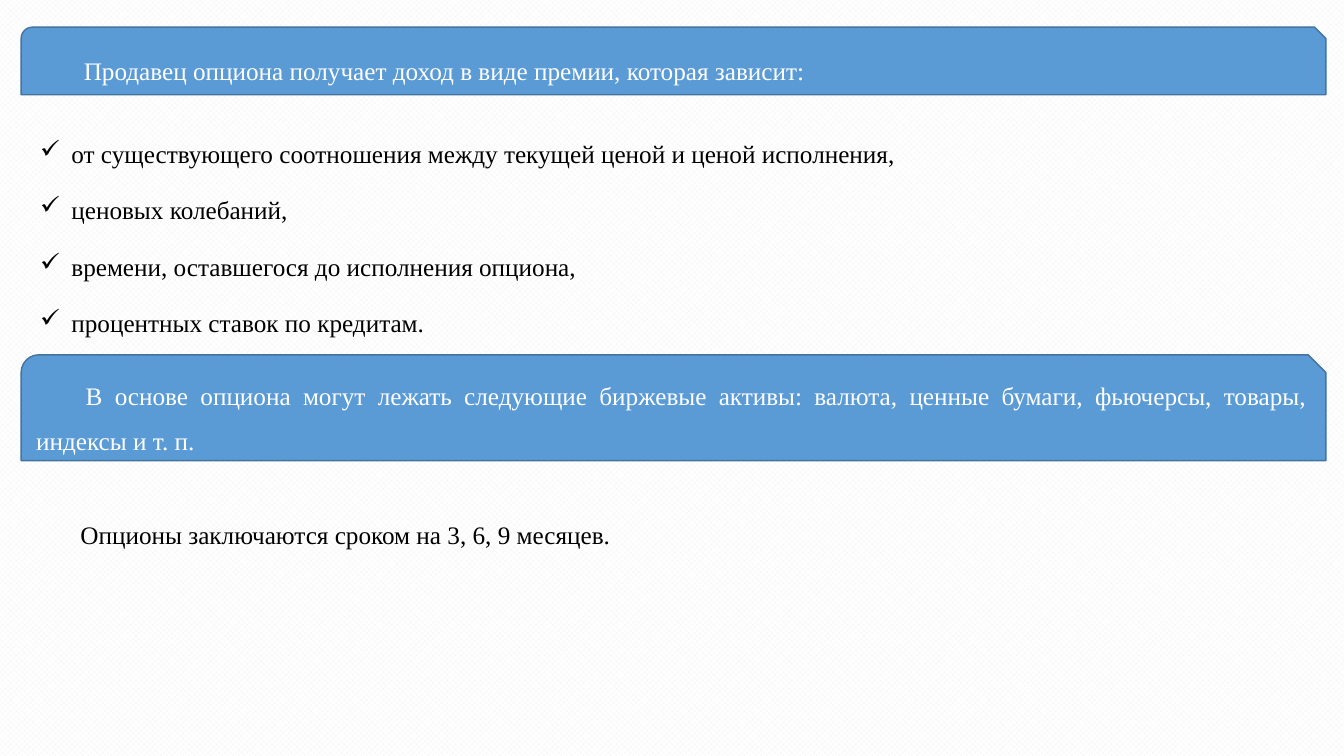
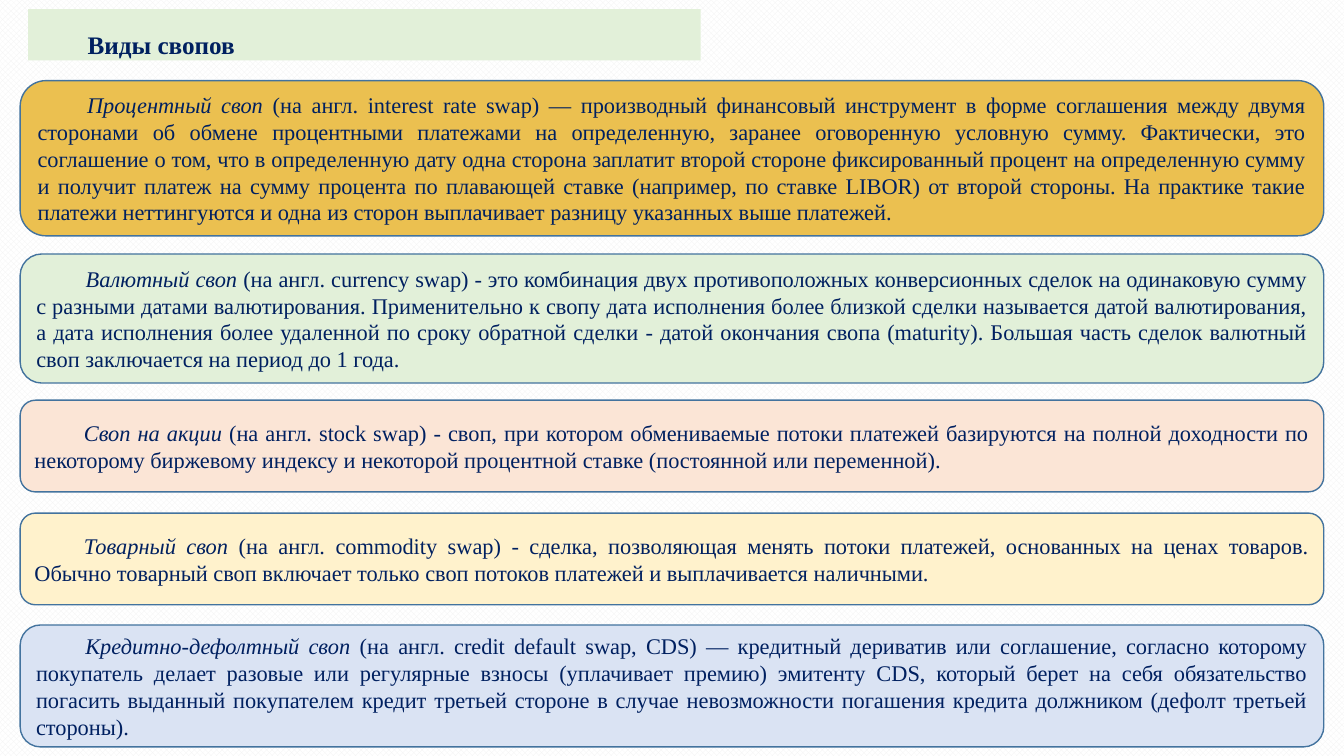
"""Build two slides on options and kinds of swaps."""
import dataclasses

import lxml.etree
import pptx
import pptx.dml.color
import pptx.enum.dml
import pptx.enum.shapes
import pptx.enum.text
import pptx.oxml.ns
import pptx.util

Inches = pptx.util.Inches
Pt = pptx.util.Pt
SHAPES = pptx.enum.shapes.MSO_SHAPE


@dataclasses.dataclass(frozen=True)
class Theme:
    """Colours, type sizes and spacing of the deck."""
    font: str = "Times New Roman"
    lead_size: int = 18
    body_size: int = 16
    paper: str = "FFFFFF"
    weave: str = "F2F2F2"
    black: str = "000000"
    white: str = "FFFFFF"
    navy: str = "002060"
    blue: str = "5B9BD5"
    outline: str = "43739E"
    gold: str = "EBC050"
    green: str = "E2F0D9"
    peach: str = "FBE5D6"
    cream: str = "FFF2CC"
    lavender: str = "DAE3F3"
    first_line: float = 0.49
    bullet_indent: float = 0.31
    lead_spacing: float = 1.5
    space_after: int = 8


def rgb(colour):
    """Turn a hex string into a colour."""
    return pptx.dml.color.RGBColor.from_string(colour)


class Deck:
    """Holds the style and the current slide."""

    def __init__(self, theme):
        """Start a wide presentation on a patterned background."""
        self.theme = theme
        self.presentation = pptx.Presentation()
        self.presentation.slide_width = Inches(13.33)
        self.presentation.slide_height = Inches(7.5)
        self.slide = None
        backdrop = self.presentation.slide_master.background.fill
        backdrop.patterned()
        backdrop.pattern = pptx.enum.dml.MSO_PATTERN.from_xml("openDmnd")
        backdrop.fore_color.rgb = rgb(theme.weave)
        backdrop.back_color.rgb = rgb(theme.paper)

    def new_slide(self):
        """Add a blank slide and make it current."""
        self.slide = self.presentation.slides.add_slide(self.presentation.slide_layouts[6])

    def style_runs(self, paragraph, size, colour):
        """Give every run the deck font."""
        for run in paragraph.runs:
            run.font.name = self.theme.font
            run.font.size = Pt(size)
            run.font.color.rgb = rgb(colour)

    def indent(self, paragraph, margin, first_line):
        """Justify a paragraph and set its indents."""
        paragraph.alignment = pptx.enum.text.PP_ALIGN.JUSTIFY
        properties = paragraph._p.get_or_add_pPr()
        properties.set("marL", str(Inches(margin)))
        properties.set("indent", str(Inches(first_line)))
        return properties

    def style_lead(self, paragraph, colour):
        """Style a widely spaced paragraph."""
        paragraph.line_spacing = self.theme.lead_spacing
        paragraph.space_after = Pt(self.theme.space_after)
        self.style_runs(paragraph, self.theme.lead_size, colour)

    def panel(self, outline_shape, box, fill):
        """Add an outlined, filled panel."""
        panel = self.slide.shapes.add_shape(outline_shape, *map(Inches, box))
        panel.shadow.inherit = False
        panel.fill.solid()
        panel.fill.fore_color.rgb = rgb(fill)
        panel.line.color.rgb = rgb(self.theme.outline)
        panel.line.width = Pt(1)
        panel.text_frame.word_wrap = True
        panel.text_frame.vertical_anchor = pptx.enum.text.MSO_ANCHOR.MIDDLE
        return panel

    def text_box(self, box):
        """Add a wrapping text box that grows with its text."""
        text_box = self.slide.shapes.add_textbox(*map(Inches, box))
        text_box.text_frame.word_wrap = True
        text_box.text_frame.auto_size = pptx.enum.text.MSO_AUTO_SIZE.SHAPE_TO_FIT_TEXT
        return text_box

    def banner(self, top, height, text):
        """Add a blue statement band."""
        box = (0.21, top, 12.94, height)
        statement = self.panel(SHAPES.SNIP_ROUND_RECTANGLE, box, self.theme.blue)
        self.lead(statement, text, self.theme.white)

    def lead(self, holder, text, colour):
        """Write one lead paragraph into a shape."""
        paragraph = holder.text_frame.paragraphs[0]
        paragraph.text = text
        self.indent(paragraph, 0, self.theme.first_line)
        self.style_lead(paragraph, colour)

    def remark(self, box, text):
        """Add a plain lead sentence."""
        self.lead(self.text_box(box), text, self.theme.black)

    def heading(self, box, text):
        """Add a bold heading on a green strip."""
        strip = self.text_box(box)
        strip.fill.solid()
        strip.fill.fore_color.rgb = rgb(self.theme.green)
        self.lead(strip, text, self.theme.navy)
        strip.text_frame.paragraphs[0].runs[0].font.bold = True

    def checklist(self, box, items):
        """Add a list with tick bullets."""
        frame = self.text_box(box).text_frame
        frame.text = "\n".join(items)
        margin = self.theme.bullet_indent
        for paragraph in frame.paragraphs:
            properties = self.indent(paragraph, margin, -margin)
            tick = lxml.etree.SubElement(properties, pptx.oxml.ns.qn("a:buChar"))
            tick.set("char", "✓")
            self.style_lead(paragraph, self.theme.black)

    def definition(self, top, height, fill, term, meaning):
        """Add a rounded card with an italic term and its meaning."""
        card = self.panel(SHAPES.ROUNDED_RECTANGLE, (0.2, top, 12.93, height), fill)
        paragraph = card.text_frame.paragraphs[0]
        paragraph.text = term
        paragraph.runs[0].font.italic = True
        paragraph.add_run().text = f" {meaning}"
        self.indent(paragraph, 0, self.theme.first_line)
        self.style_runs(paragraph, self.theme.body_size, self.theme.navy)


def option_slide(deck):
    """Build the slide on option premiums and assets."""
    deck.new_slide()
    deck.banner(0.27, 0.67, "Продавец опциона получает доход в виде премии, которая зависит:")
    deck.checklist((0.3, 1.17, 10.61, 2.21), [
        "от существующего соотношения между текущей ценой и ценой исполнения,",
        "ценовых колебаний,",
        "времени, оставшегося до исполнения опциона,",
        "процентных ставок по кредитам.",
    ])
    deck.banner(3.52, 1.05, "В основе опциона могут лежать следующие биржевые активы: "
                "валюта, ценные бумаги, фьючерсы, товары, индексы и т. п.")
    deck.remark((0.21, 4.95, 6.67, 0.51), "Опционы заключаются сроком на 3, 6, 9 месяцев.")


def swap_slide(deck):
    """Build the slide on kinds of swaps."""
    theme = deck.theme
    swaps = [
        (0.8, 1.54, theme.gold, "Процентный своп",
         "(на англ. interest rate swap) — производный финансовый инструмент в форме соглашения "
         "между двумя сторонами об обмене процентными платежами на определенную, заранее "
         "оговоренную условную сумму. Фактически, это соглашение о том, что в определенную дату "
         "одна сторона заплатит второй стороне фиксированный процент на определенную сумму и "
         "получит платеж на сумму процента по плавающей ставке (например, по ставке LIBOR) от "
         "второй стороны. На практике такие платежи неттингуются и одна из сторон выплачивает "
         "разницу указанных выше платежей."),
        (2.52, 1.28, theme.green, "Валютный своп",
         "(на англ. currency swap) - это комбинация двух противоположных конверсионных сделок на "
         "одинаковую сумму с разными датами валютирования. Применительно к свопу дата исполнения "
         "более близкой сделки называется датой валютирования, а дата исполнения более удаленной "
         "по сроку обратной сделки - датой окончания свопа (maturity). Большая часть сделок "
         "валютный своп заключается на период до 1 года."),
        (3.97, 0.91, theme.peach, "Своп на акции",
         "(на англ. stock swap) - своп, при котором обмениваемые потоки платежей базируются на "
         "полной доходности по некоторому биржевому индексу и некоторой процентной ставке "
         "(постоянной или переменной)."),
        (5.09, 0.91, theme.cream, "Товарный своп",
         "(на англ. сommodity swap) - сделка, позволяющая менять потоки платежей, основанных на "
         "ценах товаров. Обычно товарный своп включает только своп потоков платежей и "
         "выплачивается наличными."),
        (6.2, 1.21, theme.lavender, "Кредитно-дефолтный своп",
         "(на англ. credit default swap, CDS) — кредитный дериватив или соглашение, согласно "
         "которому покупатель делает разовые или регулярные взносы (уплачивает премию) эмитенту "
         "CDS, который берет на себя обязательство погасить выданный покупателем кредит третьей "
         "стороне в случае невозможности погашения кредита должником (дефолт третьей стороны)."),
    ]
    deck.new_slide()
    deck.heading((0.28, 0.09, 6.67, 0.51), "Виды свопов")
    for swap in swaps:
        deck.definition(*swap)


def main():
    """Build and save the deck."""
    deck = Deck(Theme())
    option_slide(deck)
    swap_slide(deck)
    deck.presentation.save("out.pptx")


if __name__ == "__main__":
    main()
